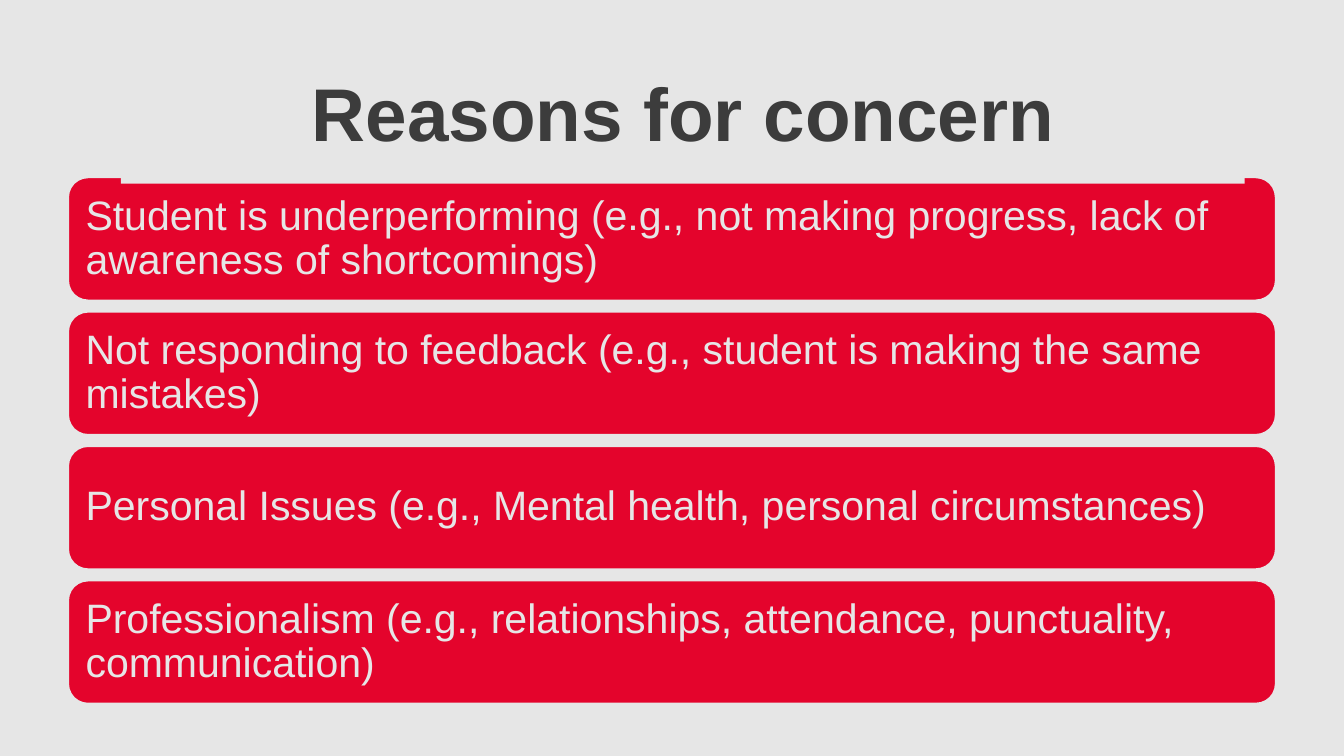
from pptx import Presentation
from pptx import util as u
from pptx.dml import color
from pptx.enum import shapes, text

Pt = u.Pt
COLOURS = {"paper": "E6E6E6", "card": "E4042C", "title": "3C3C3C"}
REASONS = [
    "Student is underperforming (e.g., not making progress, lack of awareness of shortcomings)",
    "Not responding to feedback (e.g., student is making the same mistakes)",
    "Personal Issues (e.g., Mental health, personal circumstances)",
    "Professionalism (e.g., relationships, attendance, punctuality, communication)",
]
CARD_TOP = 94.5
CARD_PITCH = 72


def rgb(name):
    return color.RGBColor.from_string(COLOURS[name])


def apply(target, values):
    for name, value in values.items():
        setattr(target, name, value)


def paint(fill, name):
    fill.solid()
    fill.fore_color.rgb = rgb(name)


def write(box, words, frame_format, para_format, font_format, colour):
    frame = box.text_frame
    apply(frame, {"word_wrap": True, "auto_size": text.MSO_AUTO_SIZE.NONE, **frame_format})
    para = frame.paragraphs[0]
    apply(para, para_format)
    span = para.add_run()
    span.text = words
    apply(span.font, {"name": "Arial", **font_format})
    span.font.color.rgb = rgb(colour)


def add_card(page, words, top):
    card = page.shapes.add_shape(
        shapes.MSO_SHAPE.ROUNDED_RECTANGLE, Pt(36), Pt(top), Pt(648), Pt(67)
    )
    card.shadow.inherit = False
    paint(card.fill, "card")
    paint(card.line.fill, "paper")
    card.line.width = Pt(2)
    margins = dict.fromkeys(
        ("margin_left", "margin_top", "margin_right", "margin_bottom"), Pt(6.6)
    )
    write(
        card,
        words,
        {"vertical_anchor": text.MSO_ANCHOR.MIDDLE, **margins},
        {"alignment": text.PP_ALIGN.LEFT, "line_spacing": 0.9, "space_after": Pt(7.7)},
        {"size": Pt(22)},
        "paper",
    )


def set_title(page, words):
    title = page.shapes.title
    apply(title, {"left": Pt(64.8), "top": Pt(20), "width": Pt(602), "height": Pt(78.4)})
    paint(title.fill, "paper")
    write(
        title,
        words,
        {
            "vertical_anchor": text.MSO_ANCHOR.BOTTOM,
            "margin_left": Pt(17.3),
            "margin_right": Pt(17.3),
            "margin_top": Pt(14.4),
            "margin_bottom": Pt(14.4),
        },
        {"alignment": text.PP_ALIGN.CENTER},
        {"size": Pt(40), "bold": True},
        "title",
    )
    page.shapes._spTree.append(title._element)


def main():
    deck = Presentation()
    apply(deck, {"slide_width": Pt(720), "slide_height": Pt(405)})
    page = deck.slides.add_slide(deck.slide_layouts[5])
    paint(page.background.fill, "paper")
    for row, reason in enumerate(REASONS):
        add_card(page, reason, CARD_TOP + row * CARD_PITCH)
    set_title(page, "Reasons for concern")
    deck.save("out.pptx")


if __name__ == "__main__":
    main()
